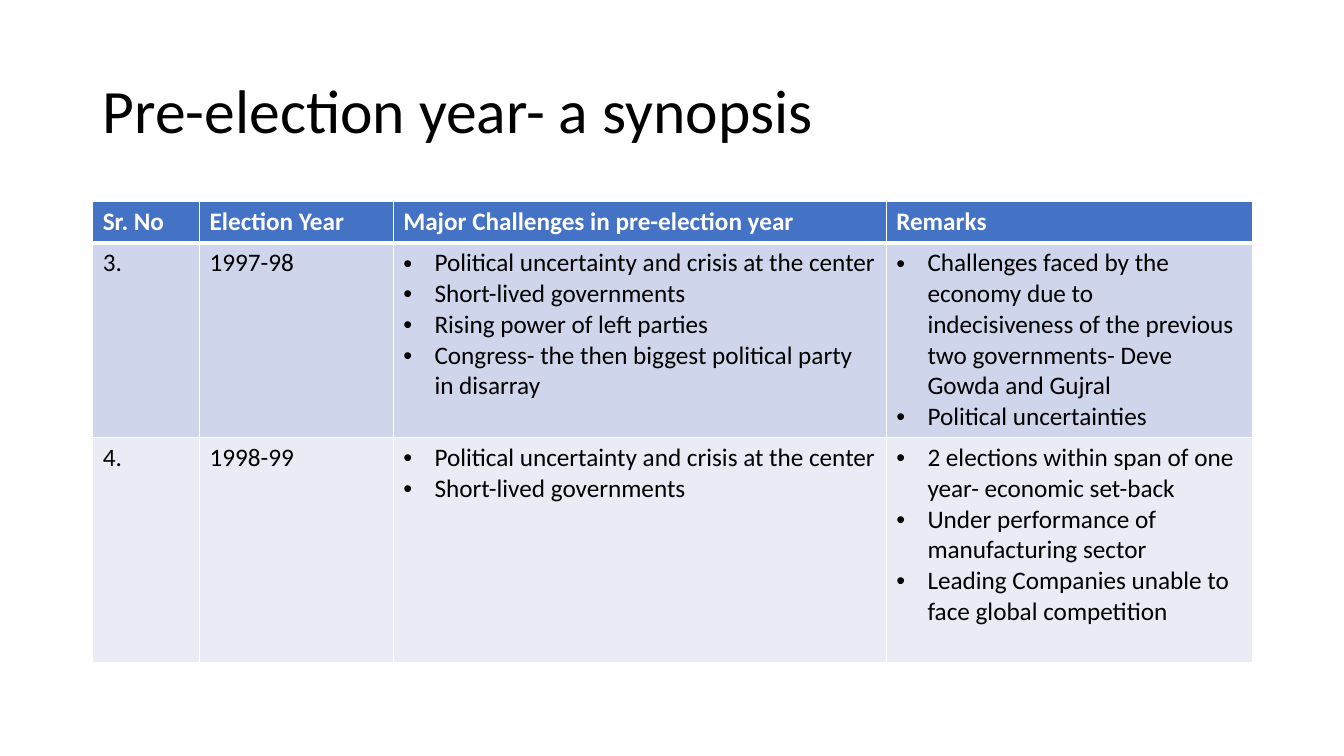
from dataclasses import dataclass

import pptx
import pptx.dml.color
import pptx.enum.text
import pptx.oxml
import pptx.oxml.ns
import pptx.util

EMU_PER_PX = 9144  # 100 px to the inch
FONT = "Calibri"
BLACK, WHITE = "000000", "FFFFFF"
TITLE_ONLY_LAYOUT = 5


@dataclass(frozen=True)
class RowStyle:
    fill: str
    ink: str
    bold: bool
    bottom_line: int


@dataclass(frozen=True)
class SynopsisRow:
    height: int
    style: RowStyle
    plain: tuple[str, ...]
    lists: tuple[tuple[str, ...], ...] = ()


HEADER = RowStyle("4472C4", WHITE, True, 3)
DARK_BAND = RowStyle("CFD5EA", BLACK, False, 1)
LIGHT_BAND = RowStyle("E9EBF5", BLACK, False, 1)

COLUMN_WIDTHS = (106, 192, 489, 363)
ROWS = (
    SynopsisRow(41, HEADER, (
        "Sr. No", "Election Year", "Major Challenges in pre-election year", "Remarks")),
    SynopsisRow(193, DARK_BAND, ("3.", "1997-98"), (
        ("Political uncertainty and crisis at the center",
         "Short-lived governments",
         "Rising power of left parties",
         "Congress- the then biggest political party in disarray"),
        ("Challenges faced by the economy due to indecisiveness of the previous "
         "two governments- Deve Gowda and Gujral",
         "Political uncertainties"))),
    SynopsisRow(223, LIGHT_BAND, ("4.", "1998-99"), (
        ("Political uncertainty and crisis at the center",
         "Short-lived governments"),
        ("2 elections within span of one year- economic set-back",
         "Under performance of manufacturing sector",
         "Leading Companies unable to face global competition"))),
)


def px(length: int) -> pptx.util.Emu:
    return pptx.util.Emu(length * EMU_PER_PX)


def color(value: str) -> pptx.dml.color.RGBColor:
    return pptx.dml.color.RGBColor.from_string(value)


def format_font(para, size: int, ink: str, bold: bool = False) -> None:
    para.font.name = FONT
    para.font.size = pptx.util.Pt(size)
    para.font.bold = bold
    para.font.color.rgb = color(ink)


def add_bullet(para) -> None:
    properties = para._p.get_or_add_pPr()
    properties.set("marL", str(px(31)))
    properties.set("indent", str(px(-31)))
    namespace = pptx.oxml.ns.nsdecls("a")
    for xml in (f'<a:buFont {namespace} typeface="Arial"/>',
                f'<a:buChar {namespace} char="•"/>'):
        properties.append(pptx.oxml.parse_xml(xml))


def add_borders(cell, bottom_line: int) -> None:
    properties = cell._tc.get_or_add_tcPr()
    sides = {"lnL": 1, "lnR": 1, "lnT": 1, "lnB": bottom_line}
    for position, (side, points) in enumerate(sides.items()):
        properties.insert(position, pptx.oxml.parse_xml(
            f'<a:{side} {pptx.oxml.ns.nsdecls("a")} w="{pptx.util.Pt(points)}">'
            f'<a:solidFill><a:srgbClr val="{WHITE}"/></a:solidFill></a:{side}>'))


def fill_cell(cell, lines: tuple[str, ...], style: RowStyle, bulleted: bool) -> None:
    cell.fill.solid()
    cell.fill.fore_color.rgb = color(style.fill)
    add_borders(cell, style.bottom_line)
    cell.text_frame.text = "\n".join(lines)
    for para in cell.text_frame.paragraphs:
        if bulleted:
            add_bullet(para)
        format_font(para, 18, style.ink, style.bold)


def add_title(page, text: str) -> None:
    title = page.shapes.title
    title.left, title.top, title.width, title.height = map(px, (92, 40, 1150, 145))
    frame = title.text_frame
    frame.text = text
    frame.auto_size = pptx.enum.text.MSO_AUTO_SIZE.NONE
    frame.vertical_anchor = pptx.enum.text.MSO_ANCHOR.MIDDLE
    para = frame.paragraphs[0]
    para.alignment = pptx.enum.text.PP_ALIGN.LEFT
    para.line_spacing = 0.9
    format_font(para, 44, BLACK)


def add_synopsis_table(page) -> None:
    height = sum(row.height for row in ROWS)
    table = page.shapes.add_table(
        len(ROWS), len(COLUMN_WIDTHS),
        px(92), px(200), px(sum(COLUMN_WIDTHS)), px(height)).table
    for column, width in zip(table.columns, COLUMN_WIDTHS):
        column.width = px(width)
    for table_row, row in zip(table.rows, ROWS):
        table_row.height = px(row.height)
        contents = [(text,) for text in row.plain] + list(row.lists)
        for index, (cell, lines) in enumerate(zip(table_row.cells, contents)):
            fill_cell(cell, lines, row.style, bulleted=index >= len(row.plain))


def main() -> None:
    deck = pptx.Presentation()
    deck.slide_width, deck.slide_height = px(1333), px(750)
    page = deck.slides.add_slide(deck.slide_layouts[TITLE_ONLY_LAYOUT])
    add_title(page, "Pre-election year- a synopsis")
    add_synopsis_table(page)
    deck.save("out.pptx")


if __name__ == "__main__":
    main()
